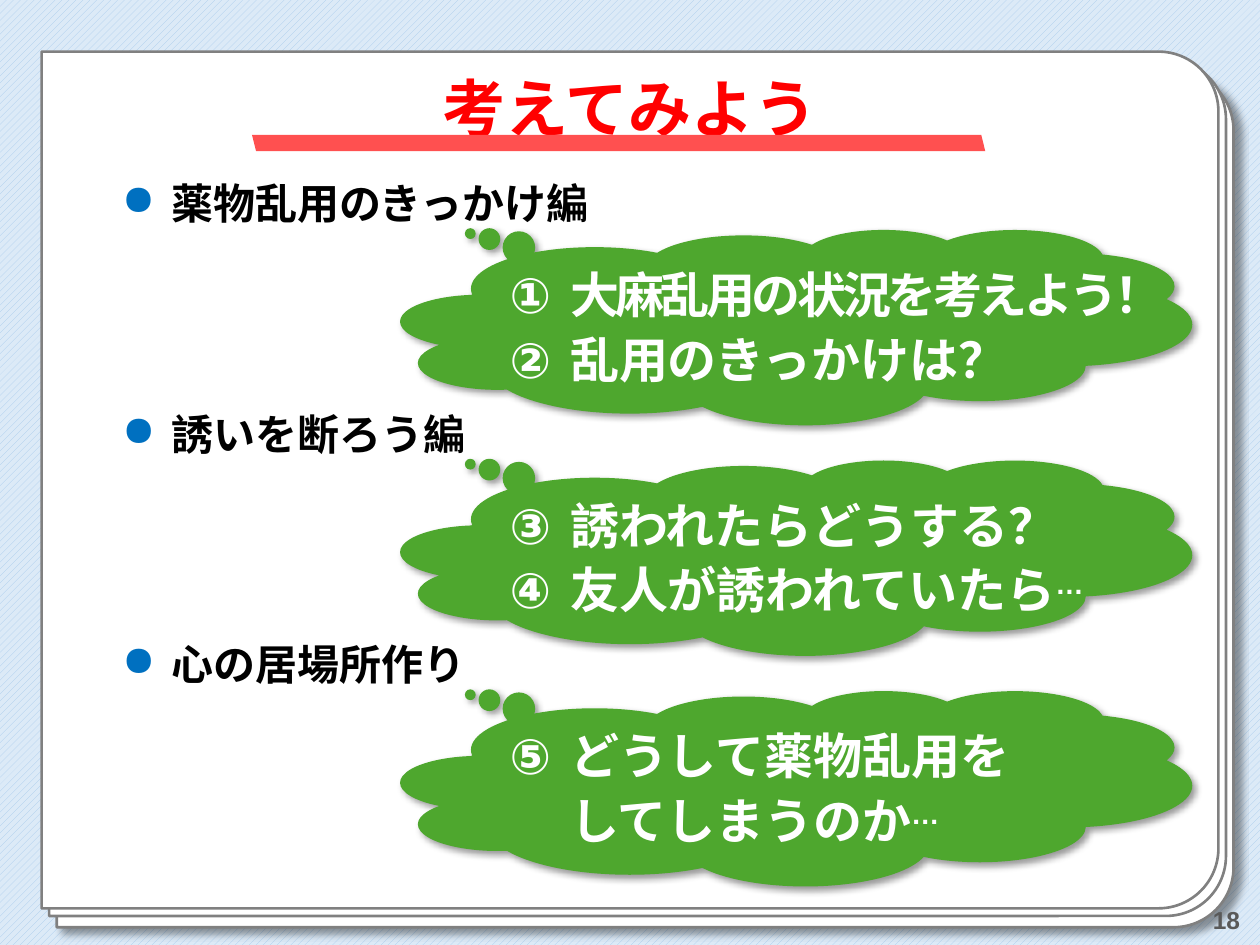
from pptx import Presentation
from pptx.dml.color import RGBColor
from pptx.enum import dml, shapes, text
from pptx.oxml import parse_xml
from pptx.oxml.ns import nsdecls, qn
from pptx.util import Inches, Pt

TITLE = "考えてみよう"
PAGE = "18"
# heading, heading width, first number, wrap, [(line, letter spacing, raised ending)]
TOPICS = [
    ("薬物乱用のきっかけ編", 3.96, 1, False,
     [("大麻乱用の状況を考えよう！", -2, ""), ("乱用のきっかけは？", 0, "")]),
    ("誘いを断ろう編", 2.95, 3, False,
     [("誘われたらどうする？", 0, ""), ("友人が誘われていたら", 0, "…")]),
    ("心の居場所作り", 2.95, 5, True,
     [("どうして薬物乱用をしてしまうのか", 0, "…")]),
]
CARDS = [(1.72, -0.71), (1.66, -0.8), (1.6, -0.86)]
TOPIC_TOP, TOPIC_PITCH, CLOUD_DROP = 1.36, 1.83, 0.46
LATIN, JAPANESE = "Arial", "Noto Sans CJK JP"


def rgb(value):
    return RGBColor.from_string(value)


def xml(body):
    """Parse one DrawingML element given without its namespace."""
    head, sep, rest = body.partition(" ")
    return parse_xml(f"{head} {nsdecls('a')} {rest}")


def add_box(s, kind, at, fill, line=None, adj=()):
    sp = s.shapes.add_shape(kind, *map(Inches, at))
    sp.shadow.inherit = False
    sp.fill.solid()
    sp.fill.fore_color.rgb = rgb(fill)
    if line:
        sp.line.color.rgb = rgb(line)
        sp.line.width = Pt(1.5)
    else:
        sp.line.fill.background()
    for i, value in enumerate(adj):
        sp.adjustments[i] = value
    return sp


def add_shadow(sp, dist):
    effects = sp._element.spPr.find(qn("a:effectLst"))
    effects.append(xml(
        f'<a:outerShdw blurRad="{Pt(4)}" dist="{Pt(dist)}" dir="2700000" algn="tl" rotWithShape="0">'
        '<a:srgbClr val="000000"><a:alpha val="40000"/></a:srgbClr></a:outerShdw>'))


def add_text(s, at, anchor, wrap):
    tf = s.shapes.add_textbox(*map(Inches, at)).text_frame
    tf.word_wrap = wrap
    tf.vertical_anchor = anchor
    return tf


def add_run(p, words, size, color, font=LATIN):
    r = p.add_run()
    r.text = words
    r.font.size, r.font.bold, r.font.name = Pt(size), True, font
    r.font.color.rgb = rgb(color)
    r._r.get_or_add_rPr().find(qn("a:latin")).addnext(xml(f'<a:ea typeface="{font}"/>'))
    return r


def set_bullet(p, indent, *elements):
    pPr = p._p.get_or_add_pPr()
    pPr.set("marL", str(Inches(indent)))
    pPr.set("indent", str(-Inches(indent)))
    for element in elements:
        pPr.append(xml(element))


def add_cloud(s, top, start, wrap, lines):
    sp = add_box(s, shapes.MSO_SHAPE.CLOUD_CALLOUT, (3.18, top, 6.28, 1.55),
                 "4EA72E", adj=(-0.412, -0.478))
    add_shadow(sp, 3)
    tf = sp.text_frame
    tf.margin_left = tf.margin_top = tf.margin_right = tf.margin_bottom = 0
    tf.word_wrap = wrap
    tf.vertical_anchor = text.MSO_ANCHOR.TOP
    for i, (words, spacing, ending) in enumerate(lines):
        p = tf.add_paragraph() if i else tf.paragraphs[0]
        p.alignment = text.PP_ALIGN.LEFT
        p.line_spacing = 1.1
        set_bullet(p, 0.48, f'<a:buAutoNum type="circleNumDbPlain" startAt="{start}"/>')
        r = add_run(p, words, 28, "FFFFFF")
        r._r.rPr.set("spc", str(spacing * 100))
        if ending:
            add_run(p, ending, 28, "FFFFFF")._r.rPr.set("baseline", "30000")


def add_heading(s, top, words, width):
    tf = add_text(s, (0.87, top, width, 0.5), text.MSO_ANCHOR.TOP, False)
    p = tf.paragraphs[0]
    p.space_after = Pt(30)
    set_bullet(p, 0.39, '<a:buClr ><a:srgbClr val="0070C0"/></a:buClr>',
               '<a:buChar char="●"/>')
    add_run(p, words, 24, "000000", JAPANESE)


def main():
    prs = Presentation()
    prs.slide_width, prs.slide_height = Inches(10), Inches(7.5)
    s = prs.slides.add_slide(prs.slide_layouts[6])

    bg = s.background.fill
    bg.patterned()
    bg.pattern = dml.MSO_PATTERN.WIDE_UPWARD_DIAGONAL
    bg.fore_color.rgb, bg.back_color.rgb = rgb("A6CAEC"), rgb("DCEAF7")

    for i, (left, top) in enumerate(CARDS):
        card = add_box(s, shapes.MSO_SHAPE.ROUND_2_SAME_RECTANGLE,
                       (left, top, 6.8, 9.34), "FFFFFF", "808080", (0.07, 0))
        card.rotation = 90
        if i == 0:
            add_shadow(card, 5)

    p = add_text(s, (7.69, 7.1, 2.25, 0.4), text.MSO_ANCHOR.MIDDLE, True).paragraphs[0]
    p.alignment = text.PP_ALIGN.RIGHT
    add_run(p, PAGE, 14, "595959")

    p = add_text(s, (0.68, 0.35, 8.64, 1.08), text.MSO_ANCHOR.MIDDLE, True).paragraphs[0]
    p.alignment = text.PP_ALIGN.CENTER
    p.line_spacing = 0.9
    add_run(p, TITLE, 36, "FF0000")

    for i, (heading, width, start, wrap, lines) in enumerate(TOPICS):
        top = TOPIC_TOP + i * TOPIC_PITCH
        add_cloud(s, top + CLOUD_DROP, start, wrap, lines)
        add_heading(s, top, heading, width)

    underline = add_box(s, shapes.MSO_SHAPE.PARALLELOGRAM, (2, 1.07, 5.82, 0.13), "FF5050")
    underline._element.spPr.find(qn("a:xfrm")).set("flipH", "1")

    prs.save("out.pptx")


if __name__ == "__main__":
    main()
